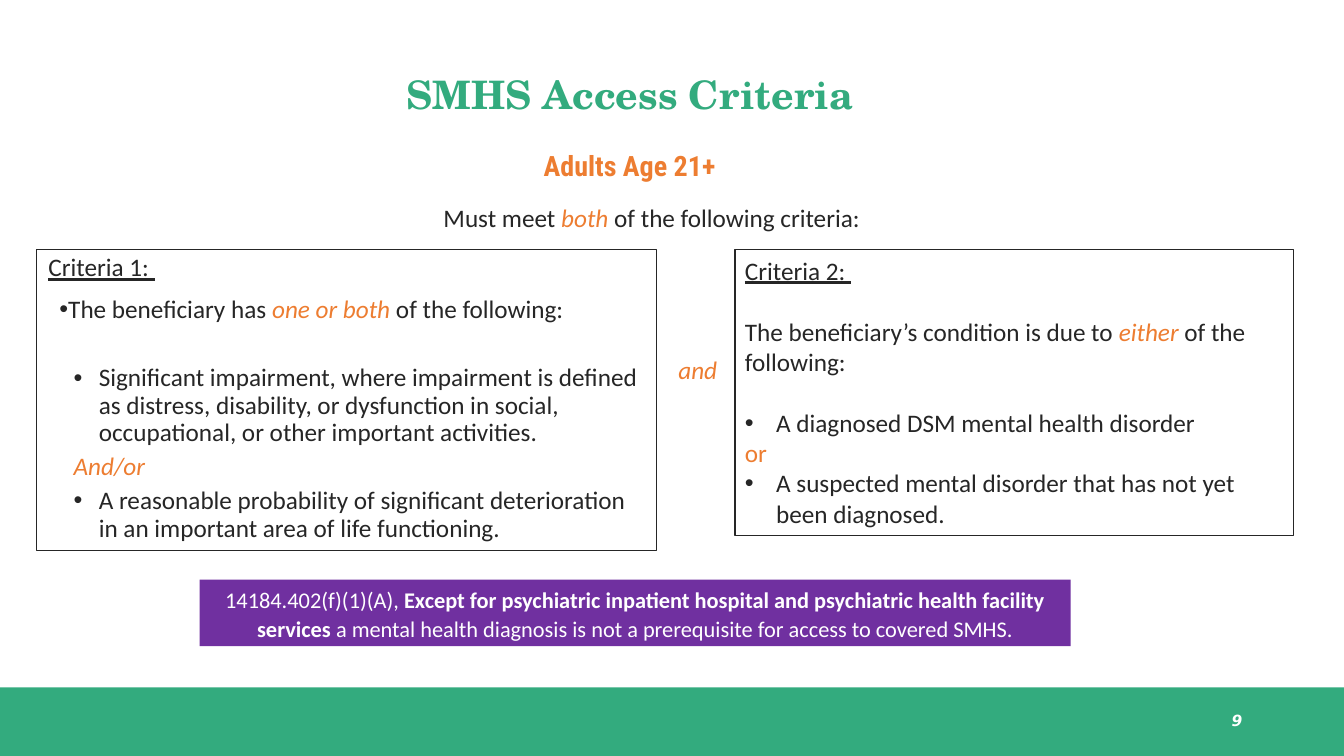
from dataclasses import dataclass

from lxml import etree
from pptx import Presentation
from pptx.dml.color import RGBColor
from pptx.enum.shapes import MSO_SHAPE
from pptx.enum.text import MSO_ANCHOR, MSO_AUTO_SIZE, PP_ALIGN
from pptx.oxml.ns import qn
from pptx.util import Inches, Pt

RECT = MSO_SHAPE.RECTANGLE
TOP, MID = MSO_ANCHOR.TOP, MSO_ANCHOR.MIDDLE
LEFT, MIDDLE, RIGHT = PP_ALIGN.LEFT, PP_ALIGN.CENTER, PP_ALIGN.RIGHT
FIXED = MSO_AUTO_SIZE.NONE


@dataclass(frozen=True)
class Theme:
    green: str = "33AB7E"
    orange: str = "ED7D31"
    purple: str = "7030A0"
    ink: str = "262626"
    white: str = "FFFFFF"
    sans: str = "Calibri"
    title: int = 28
    head: int = 20
    text: int = 18
    note: int = 16
    page: int = 11


T = Theme()
BODY = {"name": T.sans, "size": T.text, "color": T.ink}
ACCENT = BODY | {"color": T.orange}
STRESS = ACCENT | {"italic": True}
LABEL = BODY | {"underline": True}
NOTE = BODY | {"size": T.note, "color": T.white}
STRONG = NOTE | {"bold": True}
TITLE = {"name": "TeX Gyre Schola", "size": T.title, "color": T.green,
         "bold": True}
HEAD = {"name": "Roboto Condensed", "size": T.head, "color": T.orange,
        "bold": True}
PAGE = {"name": "DejaVu Sans", "size": T.page, "color": T.white,
        "bold": True, "italic": True}


def rgb(code):
    return RGBColor.from_string(code)


def add_run(para, text, style):
    run = para.add_run()
    run.text = text
    for key, value in style.items():
        if key == "color":
            run.font.color.rgb = rgb(value)
        else:
            setattr(run.font, key, Pt(value) if key == "size" else value)


def set_mark(para, left, first, bullet):
    props = para._p.get_or_add_pPr()
    props.set("marL", str(Inches(left)))
    props.set("indent", str(Inches(first)))
    if bullet:
        etree.SubElement(props, qn("a:buFont")).set("typeface", "Arial")
        etree.SubElement(props, qn("a:buChar")).set("char", "•")
    else:
        etree.SubElement(props, qn("a:buNone"))


def item(*runs, left=0, first=0, bullet=False, gap=0, level=0):
    return {"runs": runs, "mark": (left, first, bullet),
            "gap": gap, "level": level}


def write(shape, items, align=LEFT, anchor=TOP, line=1.0):
    frame = shape.text_frame
    frame.word_wrap = True
    frame.auto_size = FIXED
    frame.vertical_anchor = anchor
    for i, entry in enumerate(items):
        para = frame.add_paragraph() if i else frame.paragraphs[0]
        set_mark(para, *entry["mark"])
        form = {"level": entry["level"], "alignment": align,
                "line_spacing": line, "space_before": Pt(entry["gap"]),
                "space_after": Pt(0)}
        for key, value in form.items():
            setattr(para, key, value)
        for text, style in entry["runs"]:
            add_run(para, text, style)


def place(shape, *box):
    for key, value in zip(("left", "top", "width", "height"), box):
        setattr(shape, key, Inches(value))
    return shape


def outline(shape):
    shape.line.color.rgb = rgb(T.ink)
    shape.line.width = Pt(0.75)


def add_rect(slide, *box, fill=None):
    shape = slide.shapes.add_shape(RECT, *map(Inches, box))
    shape.shadow.inherit = False
    if fill:
        shape.fill.solid()
        shape.fill.fore_color.rgb = rgb(fill)
        shape.line.fill.background()
    else:
        shape.fill.background()
        outline(shape)
    return shape


def add_label(slide, box, *runs, **form):
    shape = slide.shapes.add_textbox(*map(Inches, box))
    write(shape, [item(*runs)], **form)


def main():
    deck = Presentation()
    deck.slide_width, deck.slide_height = Inches(13.33), Inches(7.5)
    slide = deck.slides.add_slide(deck.slide_layouts[1])

    # Footer band and page number
    add_rect(slide, 0, 6.82, 13.33, 0.68, fill=T.green)
    add_label(slide, (9.42, 6.95, 3, 0.4), ("9", PAGE),
              align=RIGHT, anchor=MID)

    # Headings
    title = place(slide.shapes.title, 0.76, 0.61, 10.98, 0.71)
    write(title, [item(("SMHS Access Criteria", TITLE))],
          align=MIDDLE, anchor=MID, line=0.9)
    add_label(slide, (3.3, 1.46, 5.89, 0.4), ("Adults Age 21+", HEAD),
              align=MIDDLE, line=0.9)
    add_label(slide, (4.3, 1.96, 4.39, 0.4), ("Must meet ", BODY),
              ("both", STRESS), (" of the following criteria:", BODY))

    # First criteria
    one = place(slide.placeholders[1], 0.36, 2.48, 6.15, 2.98)
    outline(one)
    one.text_frame.margin_left = Inches(0.12)
    sub = {"left": 0.5, "first": -0.25, "bullet": True, "level": 1}
    write(one, [
        item(("Criteria 1: ", LABEL)),
        item(("The beneficiary has ", BODY), ("one or both ", STRESS),
             ("of the following:", BODY), first=0.11, bullet=True, gap=10),
        item(("Significant impairment, where impairment is defined as "
              "distress, disability, or dysfunction in social, "
              "occupational, or other important activities.", BODY),
             gap=29.8, **sub),
        item(("And/or", STRESS), left=0.25, gap=5, level=1),
        item(("A reasonable probability of significant deterioration in "
              "an important area of life functioning.", BODY),
             gap=5, **sub),
    ], line=0.9)

    # Link word
    add_label(slide, (6.63, 3.47, 0.6, 0.4), ("and", STRESS))

    # Second criteria
    two = add_rect(slide, 7.29, 2.48, 5.54, 2.83)
    sub = {"left": 0.31, "first": -0.31, "bullet": True}
    write(two, [
        item(("Criteria 2: ", LABEL)),
        item(("The beneficiary’s condition is due to ", BODY),
             ("either", STRESS), (" of the following:", BODY), gap=22),
        item(("A diagnosed DSM mental health disorder", BODY),
             gap=22, **sub),
        item(("or", ACCENT)),
        item(("A suspected mental disorder that has not yet been "
              "diagnosed.", BODY), **sub),
    ])

    # Legal note
    note = add_rect(slide, 1.98, 5.75, 8.64, 0.66, fill=T.purple)
    write(note, [item(
        ("14184.402(f)(1)(A), ", NOTE),
        ("Except for psychiatric inpatient hospital and psychiatric "
         "health facility services", STRONG),
        (" a mental health diagnosis is not a prerequisite for access to "
         "covered SMHS.", NOTE))], align=MIDDLE, line=1.07)

    deck.save("out.pptx")


if __name__ == "__main__":
    main()
